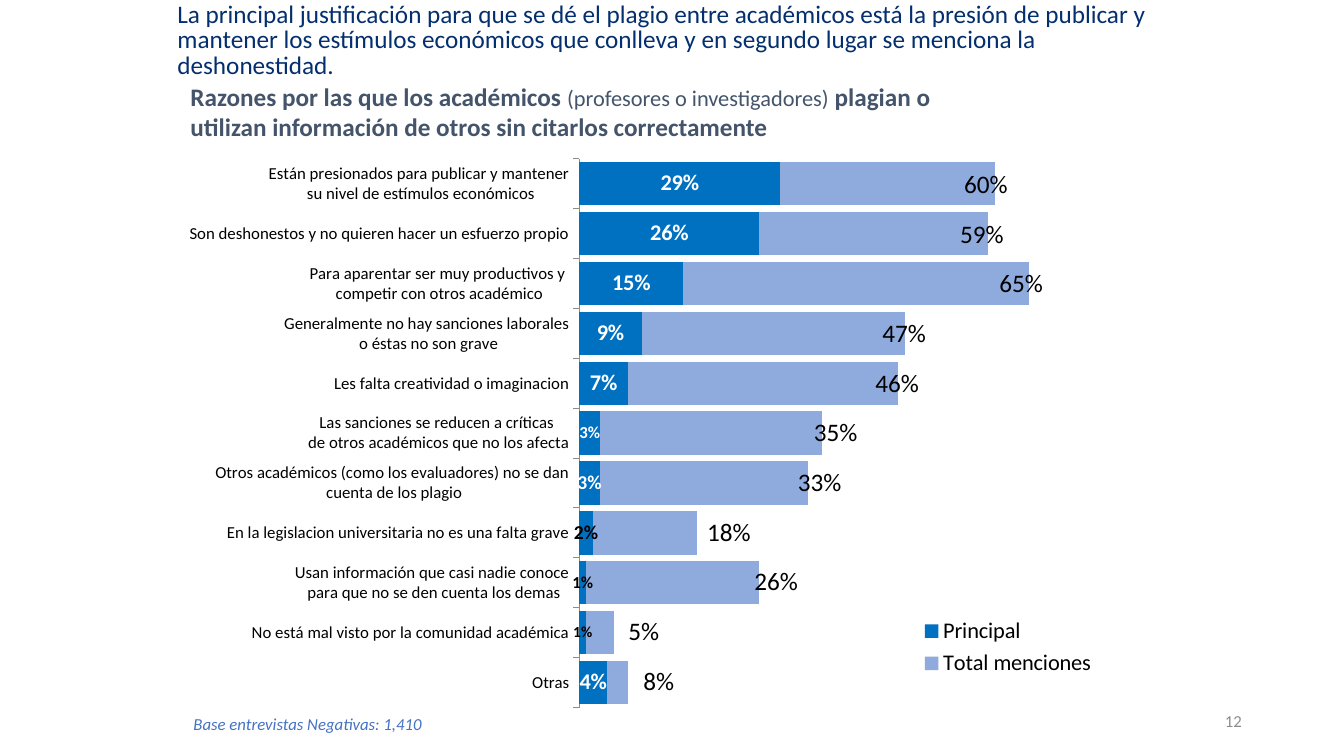
from lxml.etree import SubElement
from pptx import Presentation
from pptx.chart.data import CategoryChartData
from pptx.dml.color import RGBColor
from pptx.enum.chart import XL_CHART_TYPE, XL_LEGEND_POSITION, XL_TICK_LABEL_POSITION, XL_TICK_MARK
from pptx.enum.text import MSO_ANCHOR, MSO_AUTO_SIZE, PP_ALIGN
from pptx.oxml.ns import qn
from pptx.util import Inches, Pt

FONT = "Calibri"
SLIDE_WIDTH = Inches(13.33)
SLIDE_HEIGHT = Inches(7.5)
COLUMN = SLIDE_WIDTH / 100
ROW = SLIDE_HEIGHT / 100

BLACK = RGBColor(0, 0, 0)
WHITE = RGBColor(255, 255, 255)
GRAY = RGBColor(0x8C, 0x8C, 0x8C)
NAVY = RGBColor(0x03, 0x2F, 0x6F)
SLATE = RGBColor(0x44, 0x54, 0x6A)
NOTE_BLUE = RGBColor(0x44, 0x72, 0xC4)
MAIN_BLUE = RGBColor(0x00, 0x70, 0xC0)
LIGHT_BLUE = RGBColor(0x8F, 0xAA, 0xDC)

TITLE = (
    "La principal justificación para que se dé el plagio entre académicos está la presión de "
    "publicar y mantener los estímulos económicos que conlleva y en segundo lugar se menciona "
    "la deshonestidad."
)
REASONS = [
    ("Están presionados para publicar y mantener\n su nivel de estímulos económicos", 0.29, 0.31),
    ("Son deshonestos y no quieren hacer un esfuerzo propio", 0.26, 0.33),
    ("Para aparentar ser muy productivos y \ncompetir con otros académico", 0.15, 0.5),
    ("Generalmente no hay sanciones laborales\n o éstas no son grave", 0.09, 0.38),
    ("Les falta creatividad o imaginacion", 0.07, 0.39),
    ("Las sanciones se reducen a críticas\n de otros académicos que no los afecta", 0.03, 0.32),
    ("Otros académicos (como los evaluadores) no se dan\n cuenta de los plagio", 0.03, 0.3),
    ("En la legislacion universitaria no es una falta grave", 0.02, 0.15),
    ("Usan información que casi nadie conoce\n para que no se den cuenta los demas", 0.01, 0.25),
    ("No está mal visto por la comunidad académica", 0.01, 0.04),
    ("Otras", 0.04, 0.03),
]
TOTALS = [
    ("60%", 73.35), ("59%", 73.05), ("65%", 75.98), ("47%", 67.28), ("46%", 66.75), ("35%", 62.18),
    ("33%", 60.98), ("18%", 54.23), ("26%", 57.75), ("5%", 47.89), ("8%", 49.01),
]
SMALL_LABELS = {5: (12, WHITE), 6: (14, WHITE), 7: (14, BLACK), 8: (12, BLACK), 9: (11, BLACK)}


def area(left, top, width, height):
    return round(left * COLUMN), round(top * ROW), round(width * COLUMN), round(height * ROW)


def style_font(font, size, color=BLACK, bold=False, italic=False):
    font.name = FONT
    font.size = Pt(size)
    font.bold = bold
    font.italic = italic
    font.color.rgb = color


def write(para, text, **style):
    span = para.add_run()
    span.text = text
    style_font(span.font, **style)


def add_text(page, place, spans, align=PP_ALIGN.LEFT, anchor=MSO_ANCHOR.TOP, wrap=True):
    frame = page.shapes.add_textbox(*area(*place)).text_frame
    frame.word_wrap = wrap
    frame.vertical_anchor = anchor
    para = frame.paragraphs[0]
    para.alignment = align
    for text, style in spans:
        write(para, text, **style)


def add_title(page):
    title = page.shapes.title
    title.left, title.top, title.width, title.height = area(12.45, -0.13, 74.93, 11.2)
    frame = title.text_frame
    frame.auto_size = MSO_AUTO_SIZE.NONE
    frame.word_wrap = True
    frame.vertical_anchor = MSO_ANCHOR.MIDDLE
    para = frame.paragraphs[0]
    para.alignment = PP_ALIGN.LEFT
    para.line_spacing = Pt(18)
    write(para, TITLE, size=18, color=NAVY)


def set_layout(parent, index, shares, inner=False):
    for old in parent.findall(qn("c:layout")):
        parent.remove(old)
    layout = SubElement(parent, qn("c:layout"))
    parent.insert(index, layout)
    manual = SubElement(layout, qn("c:manualLayout"))
    settings = [("layoutTarget", "inner")] if inner else []
    settings += [("xMode", "edge"), ("yMode", "edge"), *zip("xywh", shares)]
    for tag, value in settings:
        SubElement(manual, qn(f"c:{tag}")).set("val", str(value))


def format_axes(chart):
    categories = chart.category_axis
    categories.reverse_order = True
    categories.major_tick_mark = XL_TICK_MARK.OUTSIDE
    categories.tick_label_position = XL_TICK_LABEL_POSITION.LOW
    categories.format.line.color.rgb = GRAY
    style_font(categories.tick_labels.font, 12)
    values = chart.value_axis
    values.minimum_scale = 0
    values.maximum_scale = 0.7
    values.has_major_gridlines = False
    values.visible = False


def format_series(plot):
    plot.gap_width = 15
    plot.overlap = 100
    plot.vary_by_categories = False
    for series, color in zip(plot.series, (MAIN_BLUE, LIGHT_BLUE)):
        series.format.fill.solid()
        series.format.fill.fore_color.rgb = color
    main = plot.series[0]
    labels = main.data_labels
    labels.show_value = True
    labels.number_format = "0%"
    labels.number_format_is_linked = False
    style_font(labels.font, 16, WHITE, bold=True)
    for index, (size, color) in SMALL_LABELS.items():
        style_font(main.points[index].data_label.font, size, color, bold=True)


def add_reasons_chart(page):
    names, main, extra = zip(*REASONS)
    data = CategoryChartData(number_format="0%")
    data.categories = names
    data.add_series("Principal", main)
    data.add_series("Total menciones", extra)
    place = area(12.98, 18.93, 70.88, 76.67)
    chart = page.shapes.add_chart(XL_CHART_TYPE.BAR_STACKED, *place, data).chart
    chart.has_title = False
    style_font(chart.font, 18)
    format_axes(chart)
    format_series(chart.plots[0])
    chart.has_legend = True
    legend = chart.legend
    legend.position = XL_LEGEND_POSITION.RIGHT
    legend.include_in_layout = True
    style_font(legend.font, 16)
    plot_area = chart.element.find(f".//{qn('c:plotArea')}")
    set_layout(plot_area, 0, (0.425, 0.027, 0.509, 0.947), inner=True)
    set_layout(chart.element.find(f".//{qn('c:legend')}"), 1, (0.77, 0.81, 0.21, 0.12))


def add_totals(page):
    width, pitch = 4.8, 6.57
    for index, (text, center) in enumerate(TOTALS):
        place = (center - width / 2, 21.6 + index * pitch, width, 5.33)
        add_text(page, place, [(text, {"size": 18})], align=PP_ALIGN.CENTER, wrap=False)


def main():
    deck = Presentation()
    deck.slide_width = SLIDE_WIDTH
    deck.slide_height = SLIDE_HEIGHT
    page = deck.slides.add_slide(deck.slide_layouts.get_by_name("Title Only"))
    add_title(page)
    add_reasons_chart(page)
    add_totals(page)
    strong = {"size": 18, "color": SLATE, "bold": True}
    add_text(page, (13.43, 10.13, 58.43, 9.47), [
        ("Razones por las que los académicos ", strong),
        ("(profesores o investigadores)", {"size": 16, "color": SLATE}),
        (" plagian o utilizan información de otros sin citarlos correctamente", strong),
    ])
    add_text(page, (13.65, 93.73, 23.63, 4.13), [
        ("Base entrevistas Negativas: 1,410", {"size": 12, "color": NOTE_BLUE, "italic": True}),
    ])
    add_text(page, (70.65, 92.67, 22.5, 5.33), [("12", {"size": 12, "color": GRAY})],
             align=PP_ALIGN.RIGHT, anchor=MSO_ANCHOR.MIDDLE)
    deck.save("out.pptx")


if __name__ == "__main__":
    main()
